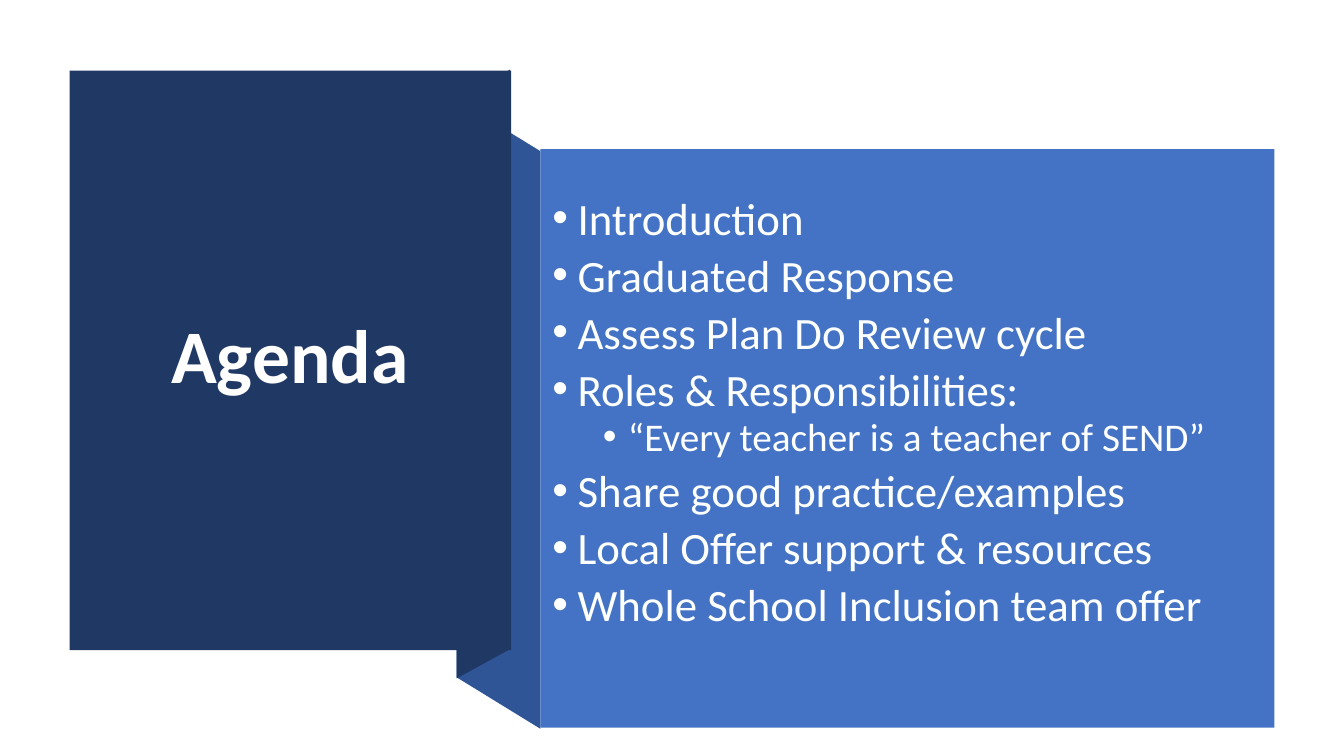
from dataclasses import dataclass

from pptx import Presentation
from pptx.dml.color import RGBColor
from pptx.enum.shapes import MSO_SHAPE
from pptx.enum.text import MSO_ANCHOR, MSO_AUTO_SIZE, PP_ALIGN
from pptx.oxml.ns import qn
from pptx.shapes.autoshape import Shape
from pptx.slide import Slide
from pptx.text.text import TextFrame
from pptx.util import Pt
from lxml import etree

PX = 9144
FONT = "Calibri"
NAVY = RGBColor(0x20, 0x38, 0x64)
FOLD = RGBColor(0x2F, 0x55, 0x97)
BLUE = RGBColor(0x44, 0x72, 0xC4)
WHITE = RGBColor(0xFF, 0xFF, 0xFF)
PALE = RGBColor(0xFE, 0xFF, 0xFF)
RECT = MSO_SHAPE.RECTANGLE
MIDDLE = MSO_ANCHOR.MIDDLE
TOP = MSO_ANCHOR.TOP
CENTER = PP_ALIGN.CENTER
NO_FIT = MSO_AUTO_SIZE.NONE
TITLE_ONLY = 5


@dataclass(frozen=True)
class Box:
    left: int
    top: int
    width: int
    height: int

    def emu(self) -> tuple[int, int, int, int]:
        return self.left * PX, self.top * PX, self.width * PX, self.height * PX


@dataclass(frozen=True)
class Panel:
    box: Box
    color: RGBColor


@dataclass(frozen=True)
class Flap:
    points: tuple[tuple[int, int], ...]
    color: RGBColor


@dataclass(frozen=True)
class Item:
    text: str
    level: int = 0


FLAPS = (
    Flap(((536, 723), (453, 672), (453, 99), (536, 150)), FOLD),
    Flap(((506, 644), (453, 673), (453, 98), (506, 69)), NAVY),
)
PANELS = (
    Panel(Box(69, 70, 438, 575), NAVY),
    Panel(Box(536, 148, 728, 574), BLUE),
)
TITLE = Box(102, 107, 371, 499)
LIST = Box(513, 145, 748, 575)
INSET = 54
STEP = 50
HANG = 25
SIZES = (32, 28)
GAPS = (10, 5)
ITEMS = (
    Item("Introduction"),
    Item("Graduated Response"),
    Item("Assess Plan Do Review cycle"),
    Item("Roles & Responsibilities:"),
    Item("“Every teacher is a teacher of SEND”", 1),
    Item("Share good practice/examples"),
    Item("Local Offer support & resources"),
    Item("Whole School Inclusion team offer"),
)


def paint(shape: Shape, color: RGBColor) -> None:
    shape.shadow.inherit = False
    shape.fill.solid()
    shape.fill.fore_color.rgb = color
    shape.line.fill.background()


def add_flap(slide: Slide, flap: Flap) -> None:
    start, *rest = flap.points
    pen = slide.shapes.build_freeform(*start, scale=PX)
    pen.add_line_segments(rest, close=True)
    paint(pen.convert_to_shape(), flap.color)


def add_panel(slide: Slide, panel: Panel) -> None:
    paint(slide.shapes.add_shape(RECT, *panel.box.emu()), panel.color)


def add_title(slide: Slide) -> None:
    title = slide.shapes.title
    title.left, title.top, title.width, title.height = TITLE.emu()
    slide.shapes.element.append(title.element)
    frame = title.text_frame
    frame.text = "Agenda"
    frame.word_wrap = True
    frame.auto_size = NO_FIT
    frame.vertical_anchor = MIDDLE
    line = frame.paragraphs[0]
    line.alignment = CENTER
    line.line_spacing = 0.9
    line.font.name = FONT
    line.font.size = Pt(54)
    line.font.bold = True
    line.font.color.rgb = WHITE


def add_item(frame: TextFrame, item: Item, first: bool) -> None:
    line = frame.paragraphs[0] if first else frame.add_paragraph()
    line.text = item.text
    line.level = item.level
    line.line_spacing = 0.8
    line.space_before = Pt(0 if first else GAPS[item.level])
    props = line._p.get_or_add_pPr()
    props.set("marL", str(STEP * (item.level + 1) * PX))
    props.set("indent", str(-HANG * PX))
    etree.SubElement(props, qn("a:buFont")).set("typeface", "Arial")
    etree.SubElement(props, qn("a:buChar")).set("char", "•")
    line.font.name = FONT
    line.font.size = Pt(SIZES[item.level])
    line.font.color.rgb = PALE


def add_list(slide: Slide) -> None:
    frame = slide.shapes.add_textbox(*LIST.emu()).text_frame
    frame.word_wrap = True
    frame.auto_size = NO_FIT
    frame.vertical_anchor = TOP
    frame.margin_top = INSET * PX
    for index, item in enumerate(ITEMS):
        add_item(frame, item, index == 0)


def main() -> None:
    deck = Presentation()
    deck.slide_width = 1333 * PX
    deck.slide_height = 750 * PX
    slide = deck.slides.add_slide(deck.slide_layouts[TITLE_ONLY])
    for flap in FLAPS:
        add_flap(slide, flap)
    for panel in PANELS:
        add_panel(slide, panel)
    add_title(slide)
    add_list(slide)
    deck.save("out.pptx")


if __name__ == "__main__":
    main()
